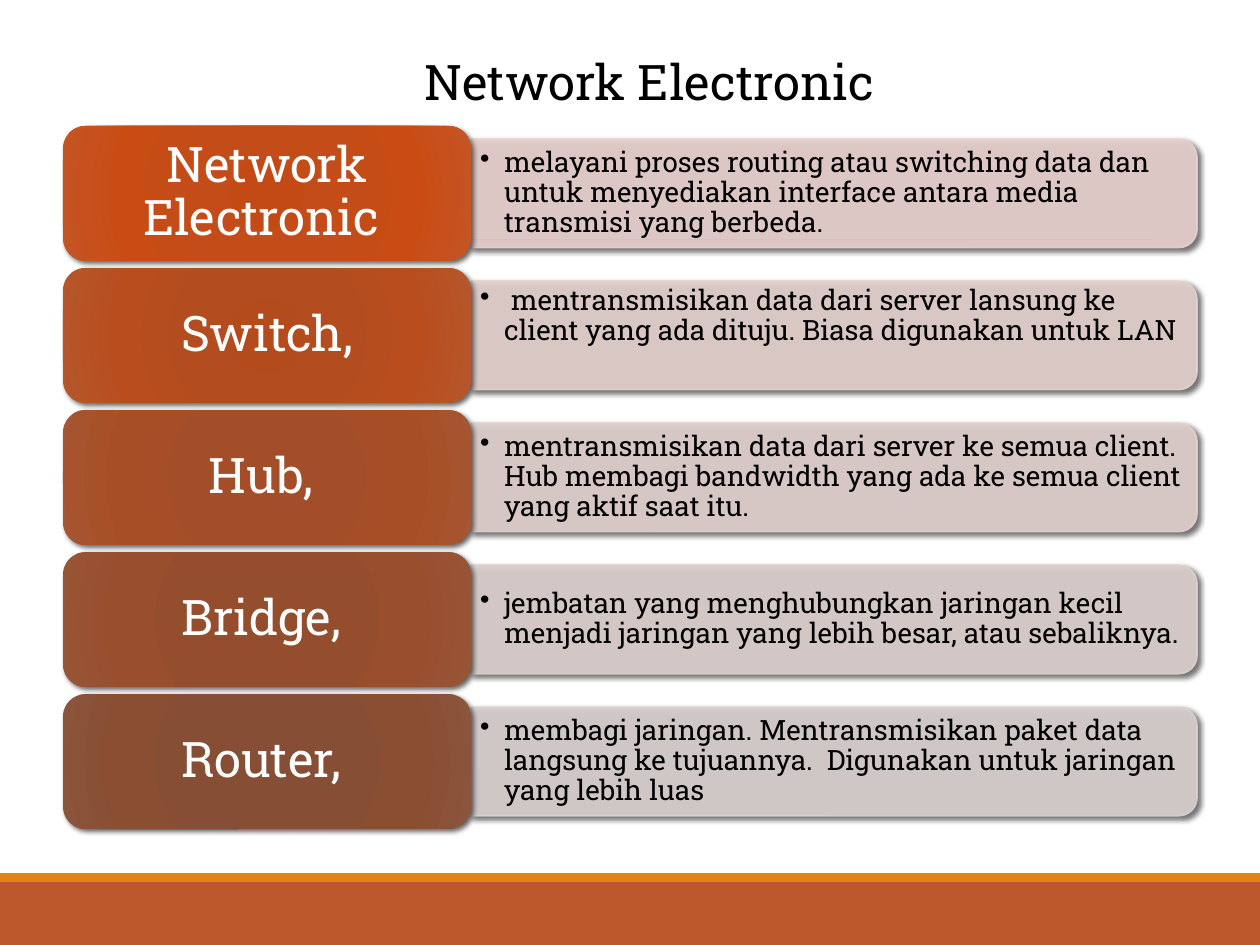
from lxml import etree
from pptx import Presentation
from pptx.dml.color import RGBColor
from pptx.enum.shapes import MSO_CONNECTOR, MSO_SHAPE
from pptx.enum.text import MSO_ANCHOR, PP_ALIGN
from pptx.oxml.ns import qn
from pptx.util import Inches, Pt

RECTANGLE = MSO_SHAPE.RECTANGLE
ROUNDED = MSO_SHAPE.ROUNDED_RECTANGLE
ROUNDED_TOP = MSO_SHAPE.ROUND_2_SAME_RECTANGLE
STRAIGHT = MSO_CONNECTOR.STRAIGHT
TOP, MIDDLE = MSO_ANCHOR.TOP, MSO_ANCHOR.MIDDLE
LEFT, CENTER = PP_ALIGN.LEFT, PP_ALIGN.CENTER

BLACK = RGBColor(0x00, 0x00, 0x00)
WHITE = RGBColor(0xFF, 0xFF, 0xFF)
RULE_GRAY = RGBColor(0x80, 0x80, 0x80)
RUST = RGBColor(0xBD, 0x58, 0x2C)
ORANGE = RGBColor(0xE4, 0x83, 0x12)

FONT = "Roboto Slab"
TITLE_FONT = {"name": FONT, "size": Pt(28), "bold": False}
DETAIL_FONT = {"name": FONT, "size": Pt(16)}
GRADIENT_STOPS = (0, 34, 70, 100)
LABEL_WIDTH = Inches(3.24)
ROW_HEIGHT = Inches(1.07)
CARD_HEIGHT = Inches(0.86)
DETAIL_HEIGHT = Inches(0.78)

DEVICES = [
    ("Network Electronic ",
     "melayani proses routing atau switching data dan untuk menyediakan interface "
     "antara media transmisi yang berbeda.",
     "E8D1CD", ("C44A15", "C34C18", "C94C15", "C45525"), MIDDLE),
    ("Switch,",
     " mentransmisikan data dari server lansung ke client yang ada dituju. "
     "Biasa digunakan untuk LAN",
     "E4D1CD", ("B44B1D", "B34D20", "B84D1E", "B5562C"), TOP),
    ("Hub, ",
     "mentransmisikan data dari server ke semua client. Hub membagi bandwidth "
     "yang ada ke semua client yang aktif saat itu.",
     "E1D1CE", ("A44C25", "A34E28", "A84E26", "A65632"), MIDDLE),
    ("Bridge, ",
     "jembatan yang menghubungkan jaringan kecil menjadi jaringan yang lebih besar, "
     "atau sebaliknya.",
     "DDD1CE", ("954C2C", "944E2E", "994E2D", "975538"), MIDDLE),
    ("Router, ",
     "membagi jaringan. Mentransmisikan paket data langsung ke tujuannya.  "
     "Digunakan untuk jaringan yang lebih luas",
     "D9D1CF", ("874C32", "864E34", "8A4E33", "8A553C"), MIDDLE),
]


def set_attributes(target, values):
    for name, value in values.items():
        setattr(target, name, value)


def add_child(parent, tag, **attributes):
    child = etree.SubElement(parent, qn(tag))
    for name, value in attributes.items():
        child.set(name, str(value))
    return child


def add_color(parent, color, alpha=None):
    element = add_child(parent, "a:srgbClr", val=color)
    if alpha is not None:
        add_child(element, "a:alpha", val=alpha * 1000)


def add_shadow(shape):
    shape.shadow.inherit = False
    effects = shape.element.spPr.find(qn("a:effectLst"))
    shadow = add_child(effects, "a:outerShdw", blurRad=Pt(3), dist=Pt(2),
                       dir=45 * 60000, rotWithShape=0)
    add_color(shadow, BLACK, 60)


def set_radial_fill(shape, colors):
    shape.fill.background()
    properties = shape.element.spPr
    gradient = etree.Element(qn("a:gradFill"), rotWithShape="1")
    stops = add_child(gradient, "a:gsLst")
    for position, color in zip(GRADIENT_STOPS, colors):
        add_color(add_child(stops, "a:gs", pos=position * 1000), color)
    circle = add_child(gradient, "a:path", path="circle")
    add_child(circle, "a:fillToRect", l=100000, t=100000, r=100000, b=100000)
    properties.replace(properties.find(qn("a:noFill")), gradient)


def write_text(frame, text, frame_format, paragraph_format, font_format, color):
    set_attributes(frame, {"word_wrap": True, **frame_format})
    paragraph = frame.paragraphs[0]
    set_attributes(paragraph, paragraph_format)
    run = paragraph.add_run()
    run.text = text
    set_attributes(run.font, font_format)
    run.font.color.rgb = color


def add_background(slide, width, height):
    for top, band_height, color in ((7, 0.5, RUST), (6.93, 0.07, ORANGE)):
        band = slide.shapes.add_shape(RECTANGLE, 0, Inches(top), width, Inches(band_height))
        band.shadow.inherit = False
        band.fill.solid()
        band.fill.fore_color.rgb = color
        band.line.fill.background()
    rule = slide.shapes.add_connector(STRAIGHT, Inches(0.98), Inches(1.9),
                                      Inches(9.15), Inches(1.9))
    rule.line.color.rgb = RULE_GRAY
    rule.line.width = Pt(0.5)
    add_child(rule.element.spPr, "a:effectLst")


def add_title(slide, left, top, width, height):
    title = slide.shapes.title
    set_attributes(title, {"left": left, "top": top, "width": width, "height": height})
    write_text(title.text_frame, "Network Electronic", {"vertical_anchor": TOP},
               {"alignment": LEFT}, TITLE_FONT, BLACK)


def add_card(slide, left, top, width, height, color):
    card = slide.shapes.add_shape(ROUNDED_TOP, left + (width - height) // 2,
                                  top + (height - width) // 2, height, width)
    card.rotation = 90
    rgb = RGBColor.from_string(color)
    card.fill.solid()
    card.fill.fore_color.rgb = rgb
    card.line.color.rgb = rgb
    card.line.width = Pt(1)
    for element in card.element.spPr.findall(".//" + qn("a:srgbClr")):
        add_child(element, "a:alpha", val=90000)
    add_shadow(card)


def add_detail(slide, left, top, width, height, text, anchor):
    frame = slide.shapes.add_textbox(left, top, width, height).text_frame
    properties = frame.paragraphs[0]._p.get_or_add_pPr()
    properties.set("marL", str(Inches(0.19)))
    properties.set("indent", str(-Inches(0.19)))
    add_child(properties, "a:buChar", char="•")
    vertical_margin = 0 if anchor == TOP else Inches(0.03)
    frame_format = {"vertical_anchor": anchor,
                    "margin_left": Inches(0.07), "margin_right": Inches(0.07),
                    "margin_top": vertical_margin, "margin_bottom": vertical_margin}
    write_text(frame, text, frame_format, {"level": 1, "line_spacing": 0.9},
               DETAIL_FONT, BLACK)


def add_label(slide, left, top, width, height, text, colors):
    label = slide.shapes.add_shape(ROUNDED, left, top, width, height)
    set_radial_fill(label, colors)
    label.line.fill.background()
    add_shadow(label)
    frame_format = {"vertical_anchor": MIDDLE,
                    "margin_left": Inches(0.12), "margin_right": Inches(0.12),
                    "margin_top": Inches(0.06), "margin_bottom": Inches(0.06)}
    write_text(label.text_frame, text, frame_format,
               {"alignment": CENTER, "line_spacing": 0.9}, TITLE_FONT, WHITE)


def add_device_list(slide, left, top, width, height):
    pitch = (height - ROW_HEIGHT) // (len(DEVICES) - 1)
    card_left, card_width = left + LABEL_WIDTH, width - LABEL_WIDTH
    for index, (name, detail, card_color, label_colors, anchor) in enumerate(DEVICES):
        row_top = top + index * pitch
        add_card(slide, card_left, row_top + (ROW_HEIGHT - CARD_HEIGHT) // 2,
                 card_width, CARD_HEIGHT, card_color)
        add_detail(slide, card_left, row_top + (ROW_HEIGHT - DETAIL_HEIGHT) // 2,
                   card_width - Inches(0.04), DETAIL_HEIGHT, detail, anchor)
        add_label(slide, left, row_top, LABEL_WIDTH, ROW_HEIGHT, name, label_colors)


def main():
    presentation = Presentation()
    presentation.slide_width = Inches(10)
    presentation.slide_height = Inches(7.5)
    slide = presentation.slides.add_slide(presentation.slide_layouts[5])
    add_background(slide, presentation.slide_width, presentation.slide_height)
    add_device_list(slide, Inches(0.5), Inches(1), Inches(9), Inches(5.58))
    add_title(slide, Inches(3.27), Inches(0.36), Inches(4.1), Inches(0.57))
    presentation.save("out.pptx")


if __name__ == "__main__":
    main()
